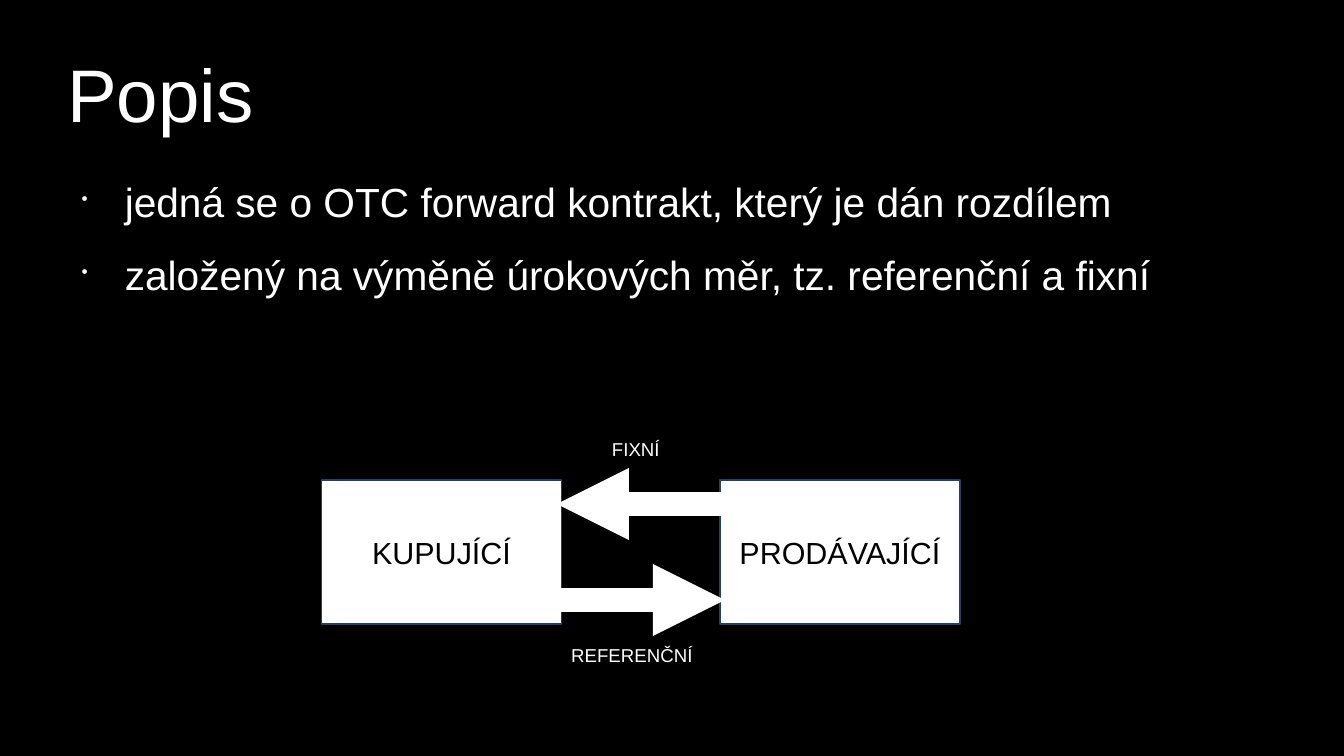
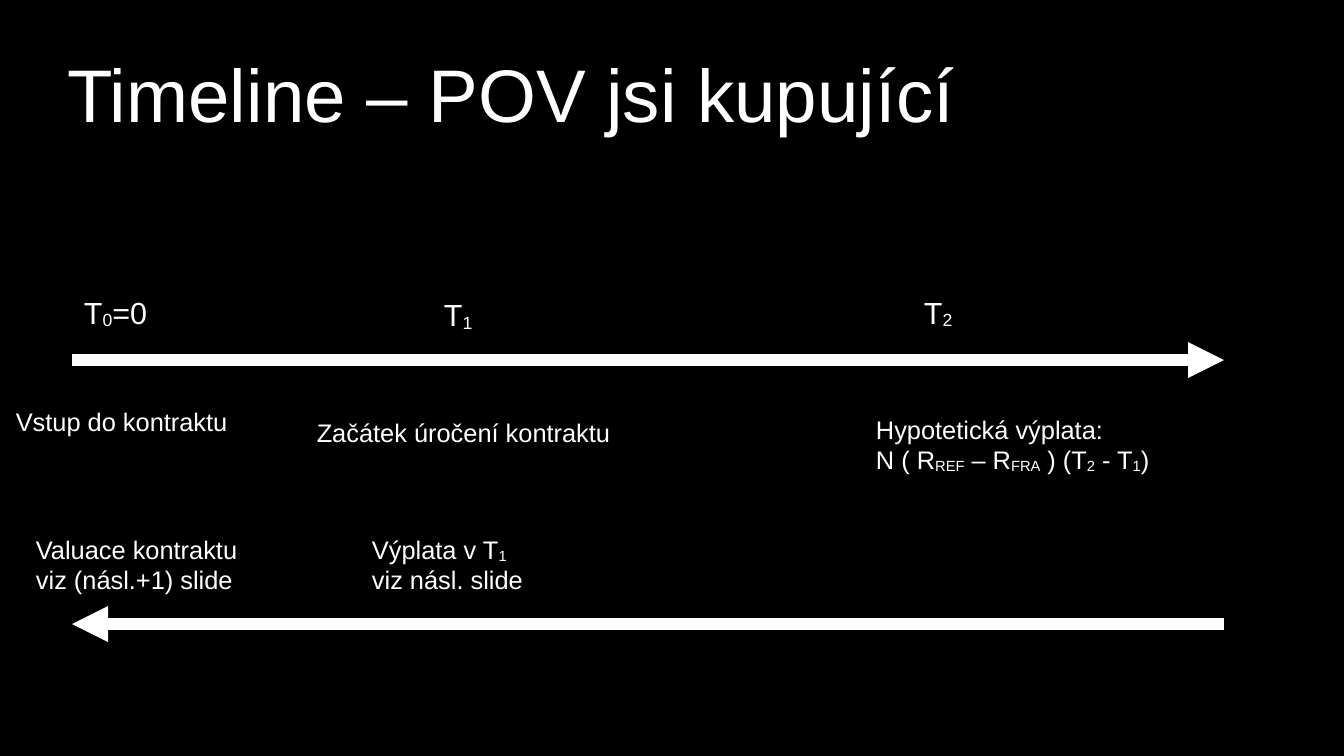
from lxml.etree import SubElement
from pptx import Presentation
from pptx.dml.color import RGBColor
from pptx.enum.shapes import MSO_CONNECTOR as Connector, MSO_SHAPE as Shape
from pptx.enum.text import MSO_ANCHOR as Anchor, PP_ALIGN as Align
from pptx.oxml.ns import qn
from pptx.util import Cm, Pt

COLUMNS, ROWS = 28, 15.75
BLACK, WHITE, NAVY = "000000", "FFFFFF", "254061"
FONT = "Arial"


def cells(*counts):
    """Turn counts of one-centimetre grid cells into lengths."""
    return [Cm(count) for count in counts]


def paint(target, color):
    """Give a fill a solid colour."""
    target.solid()
    target.fore_color.rgb = RGBColor.from_string(color)


def add_bullet(para):
    """Set a small hanging bullet on a paragraph."""
    para.space_before = Pt(14.2)
    props = para._p.get_or_add_pPr()
    props.set("marL", str(Cm(1.2)))
    props.set("indent", str(Cm(-0.9)))
    color = SubElement(props, qn("a:buClr"))
    SubElement(color, qn("a:srgbClr"), val=WHITE)
    SubElement(props, qn("a:buSzPct"), val="45000")
    SubElement(props, qn("a:buChar"), char="•")


def write(shape, text, size, color=WHITE, align=Align.LEFT,
          anchor=Anchor.TOP, inset=True, bullets=False):
    """Write lines of text, with subscripts set between bars."""
    frame = shape.text_frame
    frame.word_wrap = True
    frame.vertical_anchor = anchor
    if not inset:
        frame.margin_left = frame.margin_right = 0
        frame.margin_top = frame.margin_bottom = 0
    for row, line in enumerate(text.split("\n")):
        para = frame.add_paragraph() if row else frame.paragraphs[0]
        para.alignment = align
        if bullets:
            add_bullet(para)
        for order, part in enumerate(line.split("|")):
            span = para.add_run()
            span.text = part
            span.font.name = FONT
            span.font.size = Pt(size)
            span.font.color.rgb = RGBColor.from_string(color)
            if order % 2:
                span._r.get_or_add_rPr().set("baseline", "-8000")


def add_text(page, place, text, size, **style):
    """Add a text box on the grid."""
    write(page.shapes.add_textbox(*cells(*place)), text, size, **style)


def add_party(page, left, name):
    """Add the box of one party to the contract."""
    box = page.shapes.add_shape(Shape.RECTANGLE, *cells(left, 10, 5, 3))
    box.shadow.inherit = False
    paint(box.fill, WHITE)
    paint(box.line.fill, NAVY)
    box.line.width = Pt(0)
    write(box, name, 18, color=BLACK, align=Align.CENTER, anchor=Anchor.MIDDLE)


def add_arrow(page, start, end, row, width):
    """Add a level arrow that points at its end."""
    arrow = page.shapes.add_connector(
        Connector.STRAIGHT, *cells(start, row, end, row))
    paint(arrow.line.fill, WHITE)
    arrow.line.width = Pt(width)
    SubElement(arrow.line._get_or_add_ln(), qn("a:tailEnd"), type="triangle")
    SubElement(arrow._element.spPr, qn("a:effectLst"))


def add_page(deck, title):
    """Add a black slide with its title."""
    page = deck.slides.add_slide(deck.slide_layouts[6])
    paint(page.background.fill, BLACK)
    add_text(page, (1.4, 0.63, COLUMNS * 0.9, 2.62), title, 44,
             anchor=Anchor.MIDDLE, inset=False)
    return page


def build_description(deck):
    """Build the slide on the two parties and their exchange."""
    page = add_page(deck, "Popis")
    add_text(page, (1.4, 3.68, COLUMNS * 0.9, 3.81),
             "jedná se o OTC forward kontrakt, který je dán rozdílem\n"
             "založený na výměně úrokových měr, tz. referenční a fixní",
             24, inset=False, bullets=True)
    add_party(page, 6.7, "KUPUJÍCÍ")
    add_party(page, 15, "PRODÁVAJÍCÍ")
    add_arrow(page, 15.1, 11.6, 10.5, 14.17)
    add_arrow(page, 11.6, 15.1, 12.5, 14.17)
    add_text(page, (12.5, 9, 3, 0.7), "FIXNÍ", 11)
    add_text(page, (11.65, 13.28, 3.35, 0.7), "REFERENČNÍ", 11)


def build_timeline(deck):
    """Build the slide on the course of the contract."""
    page = add_page(deck, "Timeline – POV jsi kupující")
    first, last = 1.5, COLUMNS - 2.5
    add_arrow(page, first, last, 7.5, 7.09)
    add_arrow(page, last, first, 13, 7.09)
    for left, top, moment in ((first, 6, "T|0|=0"), (9, 6.05, "T|1|"),
                              (19, 6, "T|2|")):
        add_text(page, (left, top, 6.5, 0.96), moment.rstrip("|"), 18)
    events = (
        (0.08, 8.33, "Vstup do kontraktu"),
        (6.35, 8.57, "Začátek úročení kontraktu"),
        (18, 8.5, "Hypotetická výplata:\n"
                  "N ( R|REF| – R|FRA| ) (T|2| - T|1|)"),
    )
    for left, top, event in events:
        add_text(page, (left, top, 7, 2), event, 15)
    for left, step in ((0.5, "Valuace kontraktu\nviz (násl.+1) slide"),
                       (7.5, "Výplata v T|1\nviz násl. slide")):
        add_text(page, (left, 11, 5, 1.68), step, 15)


def main():
    """Build and save the deck."""
    deck = Presentation()
    deck.slide_width, deck.slide_height = cells(COLUMNS, ROWS)
    build_description(deck)
    build_timeline(deck)
    deck.save("out.pptx")


if __name__ == "__main__":
    main()
